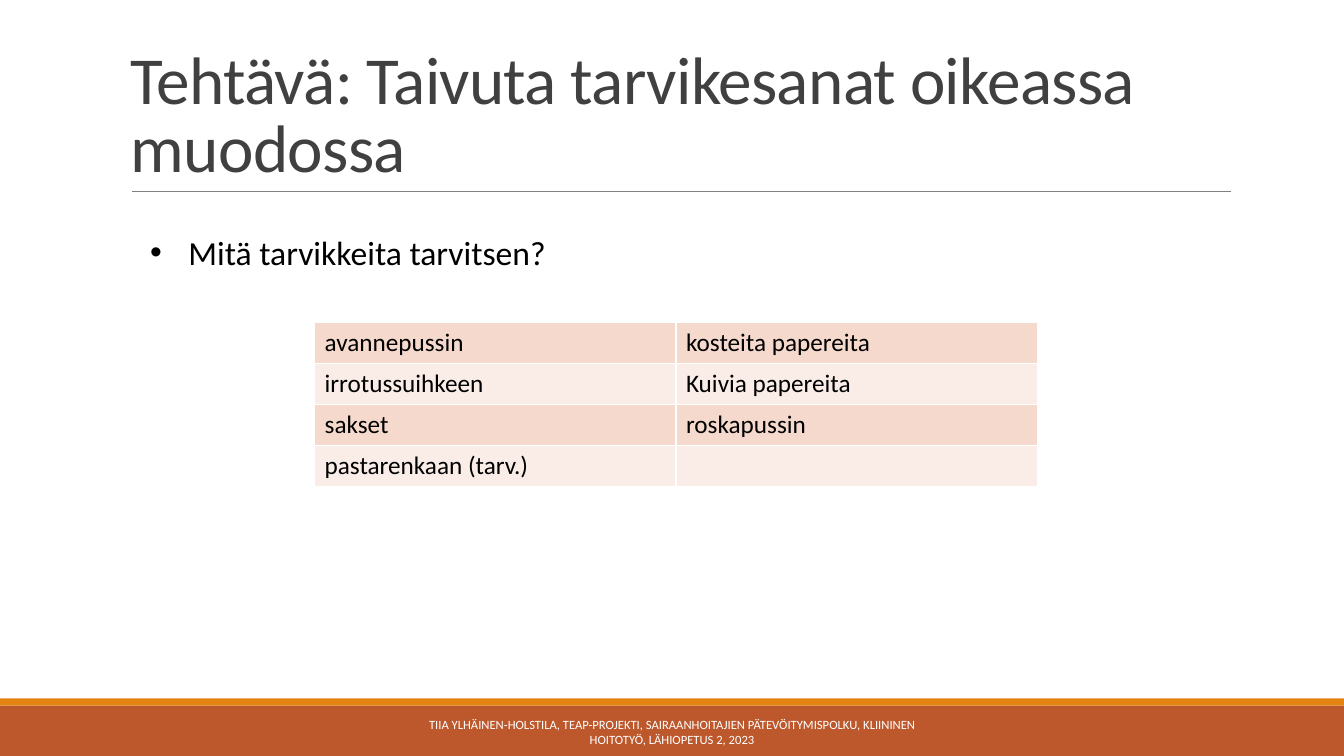
from lxml.etree import SubElement
from pptx import Presentation
from pptx.dml.color import RGBColor
from pptx.enum.shapes import MSO_CONNECTOR, MSO_SHAPE
from pptx.enum.text import MSO_ANCHOR, MSO_AUTO_SIZE, PP_ALIGN
from pptx.oxml.ns import qn
from pptx.util import Inches, Pt

SUPPLIES = [
    ("avannepussin", "kosteita papereita"),
    ("irrotussuihkeen", "Kuivia papereita"),
    ("sakset", "roskapussin"),
    ("pastarenkaan (tarv.)", ""),
]
BANDS = ("F5D9CC", "FAEDE7")


def rgb(color):
    """Turn a hex string into a colour."""
    return RGBColor.from_string(color)


def set_attrs(obj, **values):
    """Set each named format value on an object."""
    for name, value in values.items():
        setattr(obj, name, value)


def add_run(p, text, size, color):
    """Add a formatted run to a paragraph."""
    r = p.add_run()
    r.text = text
    set_attrs(r.font, name="Calibri", size=Pt(size))
    r.font.color.rgb = rgb(color)
    return r


def add_bar(s, top, height, color):
    """Draw a bar across the whole width of the slide."""
    sp = s.shapes.add_shape(MSO_SHAPE.RECTANGLE, 0, Inches(top), Inches(13.33), Inches(height))
    sp.shadow.inherit = False
    sp.fill.solid()
    sp.fill.fore_color.rgb = rgb(color)
    sp.line.fill.background()


def add_rule(s, left, right, y, color, width):
    """Draw a horizontal line without a shadow."""
    cn = s.shapes.add_connector(
        MSO_CONNECTOR.STRAIGHT, Inches(left), Inches(y), Inches(right), Inches(y))
    cn.line.color.rgb = rgb(color)
    cn.line.width = Pt(width)
    SubElement(cn._element.spPr, qn("a:effectLst"))


def add_text(s, box, text, size, color, frame=None, para=None):
    """Add a wrapped one-paragraph text box and return its paragraph and run."""
    tf = s.shapes.add_textbox(*map(Inches, box)).text_frame
    set_attrs(tf, word_wrap=True, **(frame or {}))
    p = tf.paragraphs[0]
    set_attrs(p, **(para or {}))
    return p, add_run(p, text, size, color)


def add_bullet(p, indent):
    """Give a paragraph a round bullet with a hanging indent."""
    pPr = p._p.get_or_add_pPr()
    pPr.set("marL", str(Inches(indent)))
    pPr.set("indent", str(-Inches(indent)))
    SubElement(pPr, qn("a:buFont"), typeface="Arial")
    SubElement(pPr, qn("a:buChar"), char="•")


def add_borders(cell, color, width):
    """Draw a solid line on all four sides of a cell."""
    tcPr = cell._tc.get_or_add_tcPr()
    for side in ("lnL", "lnR", "lnT", "lnB"):
        ln = SubElement(tcPr, qn(f"a:{side}"), w=str(Pt(width)))
        fill = SubElement(ln, qn("a:solidFill"))
        SubElement(fill, qn("a:srgbClr"), val=color)


def add_word_table(s, rows, left, top, width, row_height):
    """Add a table with alternating row fills."""
    table = s.shapes.add_table(
        len(rows), len(rows[0]), Inches(left), Inches(top),
        Inches(width), Inches(row_height * len(rows))).table
    set_attrs(table, first_row=False, horz_banding=False)
    for i, words in enumerate(rows):
        table.rows[i].height = Inches(row_height)
        for j, word in enumerate(words):
            cell = table.cell(i, j)
            add_borders(cell, "FFFFFF", 1)
            cell.fill.solid()
            cell.fill.fore_color.rgb = rgb(BANDS[i % 2])
            if word:
                add_run(cell.text_frame.paragraphs[0], word, 18, "000000")


def main():
    """Build the slide and save it."""
    prs = Presentation()
    set_attrs(prs, slide_width=Inches(13.33), slide_height=Inches(7.5))
    s = prs.slides.add_slide(prs.slide_layouts[6])

    add_bar(s, 7, 0.5, "BD582C")
    add_bar(s, 6.93, 0.07, "E48312")
    add_rule(s, 1.31, 12.21, 1.9, "808080", 0.5)

    _, r = add_text(
        s, (1.2, 0.31, 11, 1.59), "Tehtävä: Taivuta tarvikesanat oikeassa muodossa",
        48, "404040", {"vertical_anchor": MSO_ANCHOR.BOTTOM}, {"line_spacing": 0.85})
    r._r.get_or_add_rPr().set("spc", "-50")

    p, _ = add_text(
        s, (1.39, 2.25, 9.29, 0.5), "Mitä tarvikkeita tarvitsen?", 24, "000000",
        {"auto_size": MSO_AUTO_SIZE.SHAPE_TO_FIT_TEXT}, {"space_after": Pt(12)})
    add_bullet(p, 0.38)

    add_text(
        s, (4.03, 7.06, 5.27, 0.4),
        "TIIA YLHÄINEN-HOLSTILA, TEAP-PROJEKTI, SAIRAANHOITAJIEN PÄTEVÖITYMISPOLKU, "
        "KLIININEN HOITOTYÖ, LÄHIOPETUS 2, 2023",
        9, "FFFFFF", {"vertical_anchor": MSO_ANCHOR.MIDDLE}, {"alignment": PP_ALIGN.CENTER})

    add_word_table(s, SUPPLIES, 3.12, 3.2, 7.17, 0.406)
    prs.save("out.pptx")


if __name__ == "__main__":
    main()
